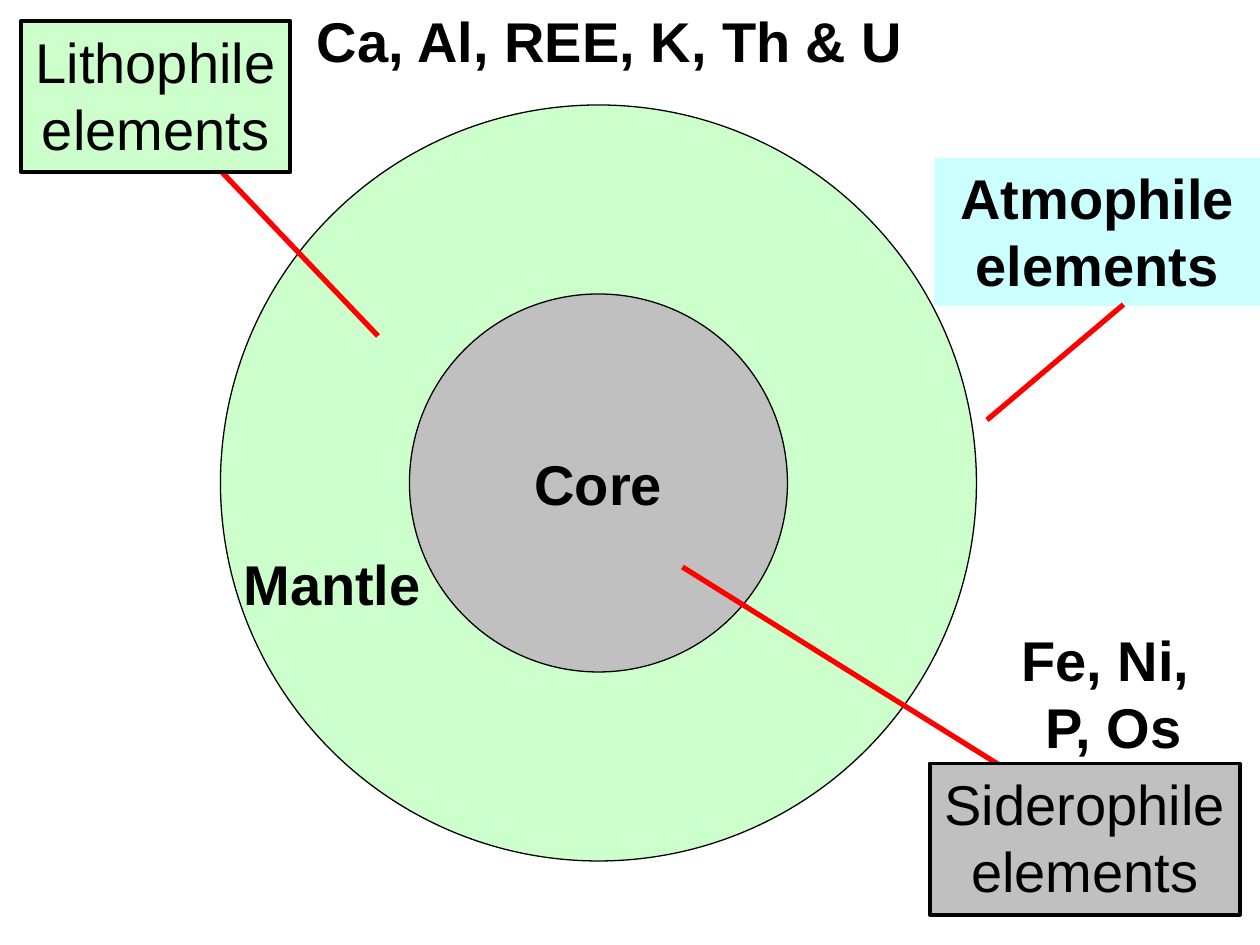
from dataclasses import dataclass
from typing import Optional

import pptx
import pptx.dml.color
import pptx.enum.shapes
import pptx.enum.text
import pptx.oxml.ns
import pptx.util

Pt = pptx.util.Pt
RGB = pptx.dml.color.RGBColor.from_string
SHAPE = pptx.enum.shapes.MSO_SHAPE
ANCHOR = pptx.enum.text.MSO_ANCHOR
AUTO_SIZE = pptx.enum.text.MSO_AUTO_SIZE
ALIGN = pptx.enum.text.PP_ALIGN


@dataclass(frozen=True)
class Theme:
    font: str = "Arial"
    size: float = 32
    ink: str = "000000"
    mantle: str = "CCFFCC"
    core: str = "C0C0C0"
    air: str = "CCFFFF"
    pointer: str = "FF0000"


THEME = Theme()


@dataclass(frozen=True)
class Layer:
    radius: float
    fill: str
    text: str = ""


@dataclass(frozen=True)
class Label:
    text: str
    left: float
    top: float
    width: float
    height: float
    fill: Optional[str] = None
    border: float = 0
    bold: bool = True
    centred: bool = True
    wrap: bool = False


@dataclass(frozen=True)
class Pointer:
    x1: float
    y1: float
    x2: float
    y2: float


# Concentric layers of the planet
CENTRE_X, CENTRE_Y = 342, 276
LAYERS = [
    Layer(216, THEME.mantle),
    Layer(108, THEME.core, "Core"),
]

# Pointers and labels, from back to front
CALLOUTS = [
    Label("Mantle", 132, 310.5, 116, 45.4, centred=False),
    Pointer(390, 324, 582, 444),
    Label("Siderophile\nelements", 531.4, 436.3, 177, 86.4,
          fill=THEME.core, border=2.25, bold=False),
    Pointer(216, 192, 96, 66),
    Label("Lithophile\nelements", 11.9, 12, 154, 86.4,
          fill=THEME.mantle, border=2.25, bold=False),
    Label("Ca, Al, REE, K, Th & U", 174, 0, 350.6, 45.4, centred=False),
    Label("Fe, Ni, \nP, Os", 576.5, 354, 119.5, 84),
    Label("Atmophile elements", 534, 90, 186, 84.6, fill=THEME.air, wrap=True),
    Pointer(642, 174, 564, 240),
]


def write_text(sp, text: str, *, bold=True, centred=True, wrap=False,
               anchor=ANCHOR.TOP, grow=True) -> None:
    """Fill a shape with text, one paragraph a line."""
    tf = sp.text_frame
    tf.word_wrap = wrap
    tf.auto_size = AUTO_SIZE.SHAPE_TO_FIT_TEXT if grow else AUTO_SIZE.NONE
    tf.vertical_anchor = anchor
    for i, line in enumerate(text.split("\n")):
        p = tf.add_paragraph() if i else tf.paragraphs[0]
        p.alignment = ALIGN.CENTER if centred else ALIGN.LEFT
        r = p.add_run()
        r.text = line
        r.font.name = THEME.font
        r.font.size = Pt(THEME.size)
        r.font.bold = bold
        r.font.color.rgb = RGB(THEME.ink)


def style_shape(sp, fill: str, border: float) -> None:
    sp.shadow.inherit = False
    sp.fill.solid()
    sp.fill.fore_color.rgb = RGB(fill)
    if border:
        sp.line.color.rgb = RGB(THEME.ink)
        sp.line.width = Pt(border)
    else:
        sp.line.fill.background()


def draw_layer(s, layer: Layer) -> None:
    sp = s.shapes.add_shape(
        SHAPE.OVAL, Pt(CENTRE_X - layer.radius), Pt(CENTRE_Y - layer.radius),
        Pt(2 * layer.radius), Pt(2 * layer.radius))
    style_shape(sp, layer.fill, 0.75)
    if layer.text:
        write_text(sp, layer.text, anchor=ANCHOR.MIDDLE, grow=False)


def draw_label(s, label: Label) -> None:
    box = (Pt(label.left), Pt(label.top), Pt(label.width), Pt(label.height))
    if label.fill:
        sp = s.shapes.add_shape(SHAPE.RECTANGLE, *box)
        style_shape(sp, label.fill, label.border)
    else:
        sp = s.shapes.add_textbox(*box)
    write_text(sp, label.text, bold=label.bold, centred=label.centred,
               wrap=label.wrap)


def draw_pointer(s, pointer: Pointer) -> None:
    line = s.shapes.add_connector(
        pptx.enum.shapes.MSO_CONNECTOR.STRAIGHT,
        Pt(pointer.x1), Pt(pointer.y1), Pt(pointer.x2), Pt(pointer.y2))
    line.line.color.rgb = RGB(THEME.pointer)
    line.line.width = Pt(3)
    # An empty effect list removes the default shadow
    effects = pptx.oxml.parse_xml(
        f"<a:effectLst {pptx.oxml.ns.nsdecls('a')}/>")
    line._element.spPr.append(effects)


def main() -> None:
    prs = pptx.Presentation()
    prs.slide_width, prs.slide_height = Pt(720), Pt(540)
    s = prs.slides.add_slide(prs.slide_layouts[6])
    for layer in LAYERS:
        draw_layer(s, layer)
    for item in CALLOUTS:
        if isinstance(item, Pointer):
            draw_pointer(s, item)
        else:
            draw_label(s, item)
    prs.save("out.pptx")


if __name__ == "__main__":
    main()
